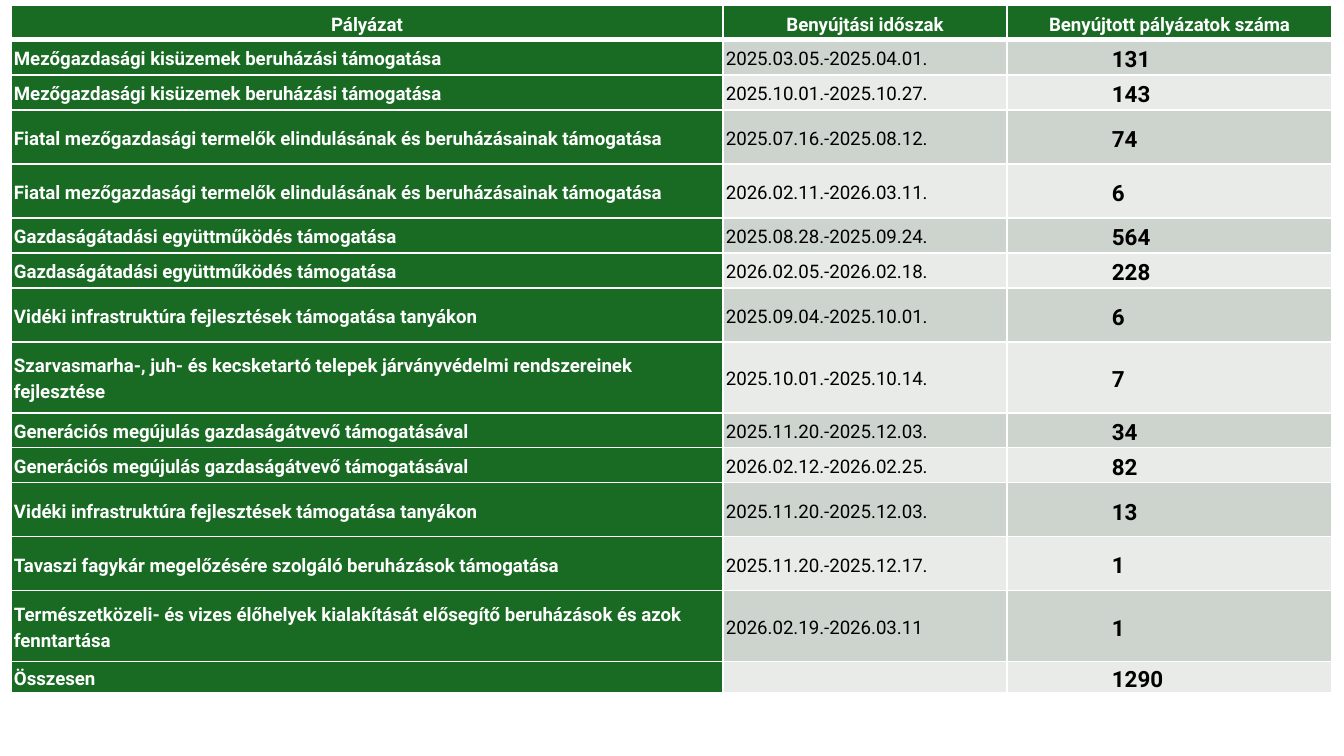
from lxml.etree import SubElement
from pptx import Presentation
from pptx.dml.color import RGBColor
from pptx.enum.text import MSO_ANCHOR as Anchor, PP_ALIGN as Align
from pptx.oxml.ns import qn
from pptx.util import Pt

SCALE = 914400 * 10 / 1344
COLORS = {
    "green": "196B24",
    "dark band": "CCD4CD",
    "light band": "E8EBE8",
    "white": "FFFFFF",
    "black": "000000",
}
HEADER = ("Pályázat", "Benyújtási időszak", "Benyújtott pályázatok száma")
SINGLE, TALL, DOUBLE, TOTAL = 35, 54, 71, 28
ENTRIES = [
    (SINGLE, "Mezőgazdasági kisüzemek beruházási támogatása", "2025.03.05.-2025.04.01.", "131"),
    (SINGLE, "Mezőgazdasági kisüzemek beruházási támogatása", "2025.10.01.-2025.10.27.", "143"),
    (TALL, "Fiatal mezőgazdasági termelők elindulásának és beruházásainak támogatása", "2025.07.16.-2025.08.12.", "74"),
    (TALL, "Fiatal mezőgazdasági termelők elindulásának és beruházásainak támogatása", "2026.02.11.-2026.03.11.", "6"),
    (SINGLE, "Gazdaságátadási együttműködés támogatása", "2025.08.28.-2025.09.24.", "564"),
    (SINGLE, "Gazdaságátadási együttműködés támogatása", "2026.02.05.-2026.02.18.", "228"),
    (TALL, "Vidéki infrastruktúra fejlesztések támogatása tanyákon", "2025.09.04.-2025.10.01.", "6"),
    (DOUBLE, "Szarvasmarha-, juh- és kecsketartó telepek járványvédelmi rendszereinek fejlesztése", "2025.10.01.-2025.10.14.", "7"),
    (SINGLE, "Generációs megújulás gazdaságátvevő támogatásával", "2025.11.20.-2025.12.03.", "34"),
    (SINGLE, "Generációs megújulás gazdaságátvevő támogatásával", "2026.02.12.-2026.02.25.", "82"),
    (TALL, "Vidéki infrastruktúra fejlesztések támogatása tanyákon", "2025.11.20.-2025.12.03.", "13"),
    (TALL, "Tavaszi fagykár megelőzésére szolgáló beruházások támogatása", "2025.11.20.-2025.12.17.", "1"),
    (DOUBLE, "Természetközeli- és vizes élőhelyek kialakítását elősegítő beruházások és azok fenntartása", "2026.02.19.-2026.03.11", "1"),
    (TOTAL, "Összesen", "", "1290"),
]
COLUMN_WIDTHS = (712, 284, 325)


def px(value):
    return round(value * SCALE)


def write_cell(cell, text, fill, color="white", size=10, bold=True,
               align=Align.LEFT, indent=0, top=1, bottom=1):
    properties = cell._tc.get_or_add_tcPr()
    for side, width in (("L", 1), ("R", 1), ("T", top), ("B", bottom)):
        line = SubElement(properties, qn(f"a:ln{side}"), w=str(Pt(width)))
        line_fill = SubElement(line, qn("a:solidFill"))
        SubElement(line_fill, qn("a:srgbClr"), val=COLORS["white"])
    cell.fill.solid()
    cell.fill.fore_color.rgb = RGBColor.from_string(COLORS[fill])
    cell.margin_left = cell.margin_right = px(3)
    cell.margin_top = cell.margin_bottom = 0
    cell.vertical_anchor = Anchor.MIDDLE
    paragraph = cell.text_frame.paragraphs[0]
    paragraph.alignment = align
    paragraph.line_spacing = 1.2
    if indent:
        paragraph._p.get_or_add_pPr().set("indent", str(px(indent)))
    if not text:
        SubElement(paragraph._p, qn("a:endParaRPr"), sz=str(size * 100))
        return
    run = paragraph.add_run()
    run.text = text
    run.font.name = "Roboto"
    run.font.size = Pt(size)
    run.font.bold = bold
    run.font.color.rgb = RGBColor.from_string(COLORS[color])


presentation = Presentation()
presentation.slide_width = px(1344)
presentation.slide_height = px(756)
slide = presentation.slides.add_slide(presentation.slide_layouts[6])

heights = [SINGLE] + [entry[0] for entry in ENTRIES]
table = slide.shapes.add_table(
    len(heights), len(COLUMN_WIDTHS), px(11), px(5), px(sum(COLUMN_WIDTHS)), px(sum(heights))
).table
table.horz_banding = False
table.first_col = True
for column, width in zip(table.columns, COLUMN_WIDTHS):
    column.width = px(width)
for row, height in zip(table.rows, heights):
    row.height = px(height)

for column, title in enumerate(HEADER):
    write_cell(table.cell(0, column), title, "green", align=Align.CENTER, bottom=3)

for row, (height, name, period, count) in enumerate(ENTRIES, start=1):
    band = "dark band" if row % 2 else "light band"
    top = 3 if row == 1 else 1
    write_cell(table.cell(row, 0), name, "green", top=top)
    write_cell(table.cell(row, 1), period, band, color="black", bold=False, top=top)
    write_cell(table.cell(row, 2), count, band, color="black", size=12, indent=102, top=top)

presentation.save("out.pptx")
